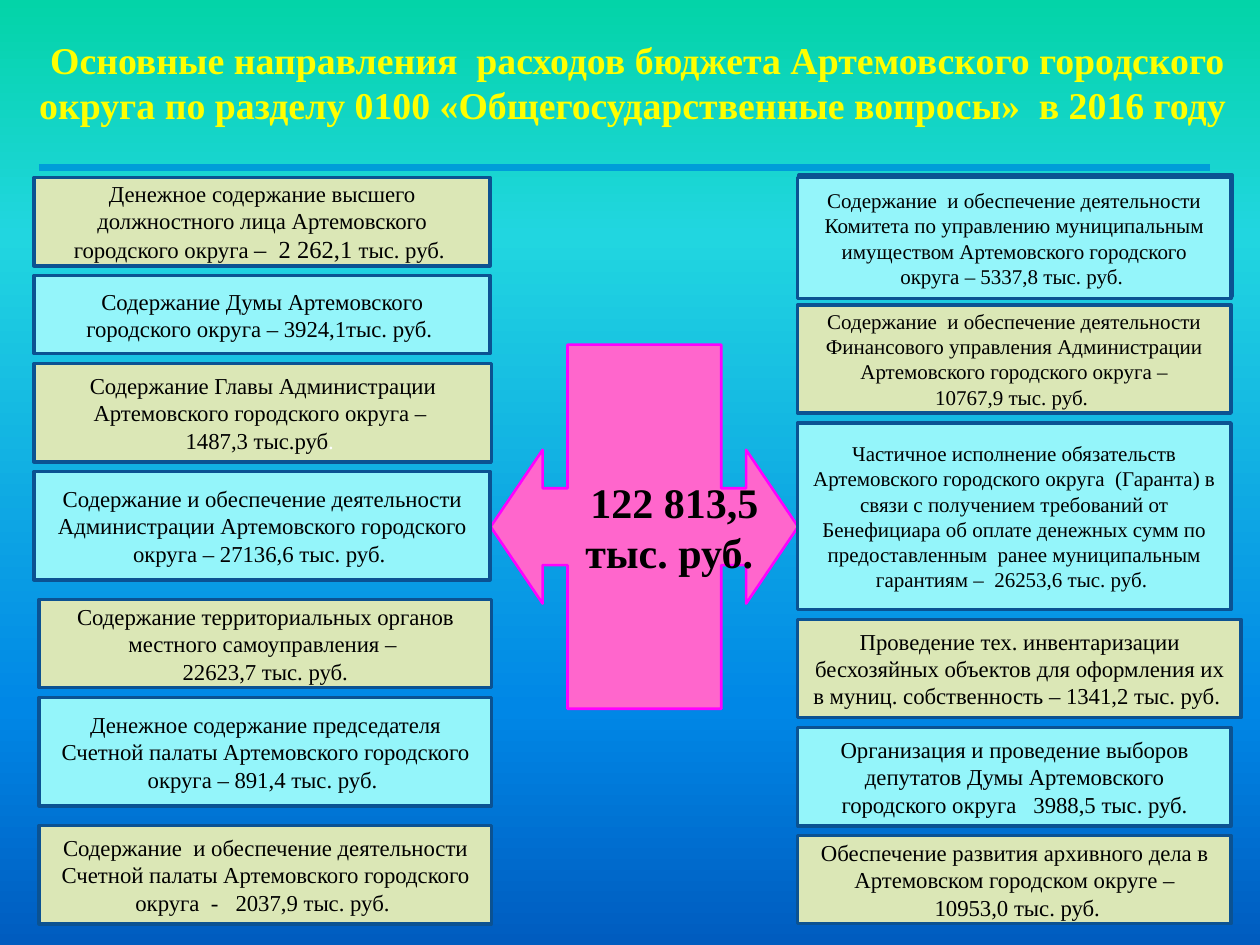
"""Build the slide on general government spending of the Artemovsky district in 2016."""
from copy import deepcopy
from dataclasses import dataclass

from lxml import etree
from pptx import Presentation
from pptx.dml.color import RGBColor
from pptx.enum import shapes, text
from pptx.oxml import ns
from pptx.util import Pt

FONT = "Times New Roman"
YELLOW = RGBColor(0xFF, 0xFF, 0x00)
BLACK = RGBColor(0x00, 0x00, 0x00)
WHITE = RGBColor(0xFF, 0xFF, 0xFF)
CYAN = RGBColor(0x94, 0xF5, 0xFA)
GREEN = RGBColor(0xDB, 0xE7, 0xB6)
NAVY = RGBColor(0x0B, 0x52, 0x92)
PINK = RGBColor(0xFF, 0x66, 0xCC)
MAGENTA = RGBColor(0xFF, 0x00, 0xFF)
RULE_BLUE = RGBColor(0x00, 0x9D, 0xD9)
BACKGROUND = (
    (0, RGBColor(0x03, 0xD4, 0xA8)),
    (0.25, RGBColor(0x21, 0xD6, 0xE0)),
    (0.75, RGBColor(0x00, 0x87, 0xE6)),
    (1, RGBColor(0x00, 0x5C, 0xBF)),
)
COLUMN_TOP = 101.5
GAP = 5.6


@dataclass
class Run:
    text: str
    size: float | None = None
    color: RGBColor | None = None


@dataclass
class Box:
    left: float
    width: float
    height: float
    paragraphs: list[list[Run]]
    size: float = 13
    gap: float = GAP


def plain(*lines: str) -> list[list[Run]]:
    """Return one single-run paragraph per line."""
    return [[Run(line)] for line in lines]


LEFT_BOXES = [
    Box(19.4, 260.6, 50.4, [[
        Run("Денежное содержание высшего должностного лица Артемовского городского округа "),
        Run("–  2 262,1 ", size=14),
        Run("тыс. руб. ")]]),
    Box(19.4, 260.6, 44.6, plain(
        "Содержание Думы Артемовского городского округа – 3924,1тыс. руб. ")),
    Box(19.4, 261.4, 56.2, [
        [Run("Содержание Главы Администрации Артемовского городского округа – ")],
        [Run("1487,3 тыс.руб"), Run(". ", color=WHITE)]]),
    Box(19.4, 260.6, 61.9, plain(
        "Содержание и обеспечение деятельности Администрации Артемовского городского "
        "округа – 27136,6 тыс. руб. "), gap=2 * GAP),
    Box(22.3, 258.5, 50.4, plain(
        "Содержание территориальных органов местного самоуправления – ",
        "22623,7 тыс. руб.")),
    Box(22.3, 258.5, 61.9, plain(
        "Денежное содержание председателя Счетной палаты Артемовского городского "
        "округа – 891,4 тыс. руб. "), gap=2 * GAP),
    Box(22.3, 258.5, 56.2, plain(
        "Содержание  и обеспечение деятельности Счетной палаты Артемовского городского "
        "округа  -   2037,9 тыс. руб. ")),
]
RIGHT_BOXES = [
    Box(455.8, 247.7, 69.1, plain(
        "Содержание  и обеспечение деятельности Комитета по управлению муниципальным "
        "имуществом Артемовского городского округа – 5337,8 тыс. руб. "), 12, 3.6),
    Box(455.8, 247.7, 61.9, plain(
        "Содержание  и обеспечение деятельности Финансового управления Администрации "
        "Артемовского городского округа –",
        "10767,9 тыс. руб. "), 12),
    Box(455.8, 247.7, 106.6, plain(
        "Частичное исполнение обязательств Артемовского городского округа  (Гаранта) в "
        "связи с получением требований от Бенефициара об оплате денежных сумм по "
        "предоставленным  ранее муниципальным гарантиям –  26253,6 тыс. руб. "), 12),
    Box(455.8, 253.4, 56.2, plain(
        "Проведение тех. инвентаризации бесхозяйных объектов для оформления их в муниц. "
        "собственность – 1341,2 тыс. руб. ")),
    Box(455.8, 247.7, 56.2, plain(
        "Организация и проведение выборов депутатов Думы Артемовского городского "
        "округа   3988,5 тыс. руб.")),
    Box(455.8, 247.7, 50.4, plain(
        "Обеспечение развития архивного дела в Артемовском городском округе –",
        " 10953,0 тыс. руб.")),
]


def paint_background(slide) -> None:
    """Fill the background with the vertical four-stop gradient."""
    fill = slide.background.fill
    fill.gradient()
    fill.gradient_angle = 270
    stop_list = slide.element.find(".//" + ns.qn("a:gsLst"))
    for _ in range(len(BACKGROUND) - len(stop_list)):
        stop_list.append(deepcopy(stop_list[0]))
    for stop, (position, color) in zip(fill.gradient_stops, BACKGROUND):
        stop.position = position
        stop.color.rgb = color


def write(frame, paragraphs: list[list[Run]], size: float, color: RGBColor,
          bold: bool = False) -> None:
    """Write centred paragraphs, overriding single runs where they differ."""
    for index, runs in enumerate(paragraphs):
        paragraph = frame.add_paragraph() if index else frame.paragraphs[0]
        paragraph.alignment = text.PP_ALIGN.CENTER
        paragraph.font.name = FONT
        paragraph.font.size = Pt(size)
        paragraph.font.bold = bold
        paragraph.font.color.rgb = color
        for item in runs:
            run = paragraph.add_run()
            run.text = item.text
            if item.size:
                run.font.size = Pt(item.size)
            if item.color:
                run.font.color.rgb = item.color


def add_figure(slide, kind, left: float, top: float, width: float, height: float,
               fill: RGBColor, line: RGBColor, line_width: float):
    """Add a flat preset shape with a solid fill and outline."""
    shape = slide.shapes.add_shape(kind, Pt(left), Pt(top), Pt(width), Pt(height))
    shape.shadow.inherit = False
    shape.fill.solid()
    shape.fill.fore_color.rgb = fill
    shape.line.color.rgb = line
    shape.line.width = Pt(line_width)
    return shape


def add_panel(slide, left: float, top: float, width: float, height: float, fill: RGBColor):
    """Add one outlined rectangle."""
    return add_figure(slide, shapes.MSO_SHAPE.RECTANGLE, left, top, width, height,
                      fill, NAVY, 2)


def add_column(slide, boxes: list[Box], colors: tuple[RGBColor, RGBColor]) -> None:
    """Stack boxes downwards in alternating colours."""
    top = COLUMN_TOP
    for index, box in enumerate(boxes):
        panel = add_panel(slide, box.left, top, box.width, box.height, colors[index % 2])
        write(panel.text_frame, box.paragraphs, box.size, BLACK)
        top += box.height + box.gap


def add_title(slide) -> None:
    """Place and fill the title placeholder."""
    title = slide.shapes.title
    title.left, title.top, title.width, title.height = Pt(8.6), Pt(16.6), Pt(711.4), Pt(56.2)
    frame = title.text_frame
    frame.auto_size = text.MSO_AUTO_SIZE.NONE
    frame.vertical_anchor = text.MSO_ANCHOR.BOTTOM
    frame.margin_left = frame.margin_right = frame.margin_bottom = 0
    write(frame, plain("Основные направления  расходов бюджета Артемовского городского округа "
                       "по разделу 0100 «Общегосударственные вопросы»  в 2016 году "),
          21.6, YELLOW, bold=True)


def add_total(slide) -> None:
    """Add the two-way arrow with the total."""
    arrow = add_figure(slide, shapes.MSO_SHAPE.UP_DOWN_ARROW_CALLOUT,
                       264.2, 213.1, 208.1, 175.7, PINK, MAGENTA, 1.5)
    arrow.rotation = 270
    for index, value in enumerate((0.25, 0.25, 0.169, 0.5)):
        arrow.adjustments[index] = value
    arrow.text_frame.word_wrap = False
    arrow.element.txBody.bodyPr.set("vert", "eaVert")
    write(arrow.text_frame, plain(" 122 813,5", "тыс. руб."), 24, BLACK, bold=True)


def add_rule(slide) -> None:
    """Draw the line under the title."""
    rule = slide.shapes.add_connector(shapes.MSO_CONNECTOR.STRAIGHT,
                                      Pt(22.3), Pt(95.8), Pt(691.2), Pt(95.8))
    rule.line.color.rgb = RULE_BLUE
    rule.line.width = Pt(3.75)
    etree.SubElement(rule.element.spPr, ns.qn("a:effectLst"))


def main() -> None:
    """Build and save the presentation."""
    presentation = Presentation()
    presentation.slide_width, presentation.slide_height = Pt(720), Pt(540)
    slide = presentation.slides.add_slide(presentation.slide_layouts[5])
    paint_background(slide)
    add_title(slide)
    add_total(slide)
    add_rule(slide)
    add_panel(slide, 456.5, 100.1, 247.7, 69.1, CYAN)
    add_column(slide, LEFT_BOXES, (GREEN, CYAN))
    add_column(slide, RIGHT_BOXES, (CYAN, GREEN))
    presentation.save("out.pptx")


if __name__ == "__main__":
    main()
